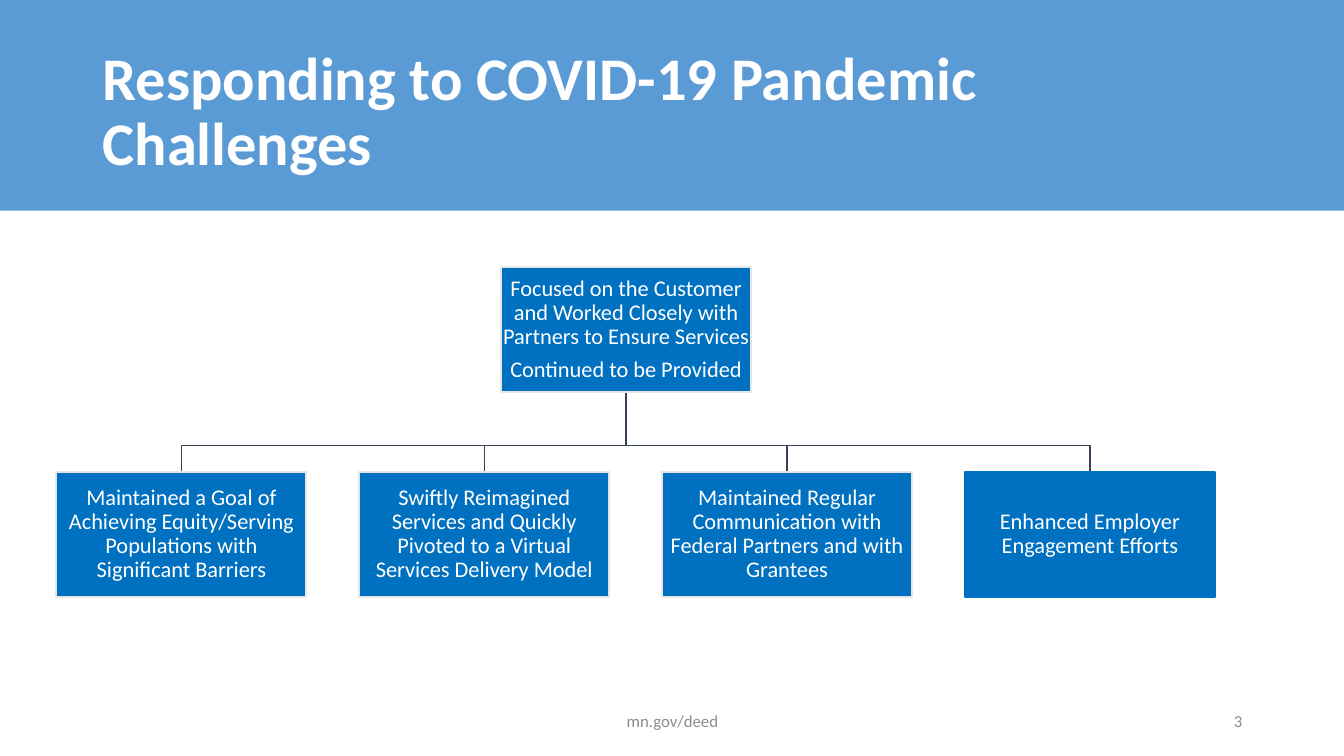
from dataclasses import dataclass

from lxml import etree
from pptx import Presentation
from pptx import util as u
from pptx.dml.color import RGBColor
from pptx.enum import shapes, text
from pptx.oxml.ns import qn


@dataclass(frozen=True)
class Theme:
    """Colours, font and type sizes of the slide."""
    band: str = "5B9BD5"
    box: str = "0070C0"
    border: str = "E7E6E6"
    branch: str = "364355"
    light: str = "FFFFFF"
    muted: str = "8C8C8C"
    font: str = "Calibri"
    title_size: float = 43.2
    box_size: float = 16
    footer_size: float = 12


class ChartPage:
    """Draws the elements of an organisation chart on one slide."""

    def __init__(self, page, theme):
        """Keep the slide and its style."""
        self.page = page
        self.theme = theme

    def rectangle(self, left, top, width, height, fill, border=None):
        """Add a filled rectangle with an optional border."""
        shape = self.page.shapes.add_shape(
            shapes.MSO_SHAPE.RECTANGLE,
            *map(u.Inches, (left, top, width, height)))
        shape.shadow.inherit = False
        shape.fill.solid()
        shape.fill.fore_color.rgb = RGBColor.from_string(fill)
        if border:
            shape.line.color.rgb = RGBColor.from_string(border)
            shape.line.width = u.Pt(1.5)
        else:
            shape.line.fill.background()
        return shape

    def fill_text(self, shape, paragraphs, size, color, align, bold=False,
                  spacing=1.0, after=0):
        """Fill a shape with vertically centred paragraphs."""
        frame = shape.text_frame
        frame.word_wrap = True
        frame.vertical_anchor = text.MSO_ANCHOR.MIDDLE
        for index, wording in enumerate(paragraphs):
            para = frame.add_paragraph() if index else frame.paragraphs[0]
            para.alignment = align
            para.line_spacing = spacing
            para.space_after = u.Pt(after)
            span = para.add_run()
            span.text = wording
            span.font.name = self.theme.font
            span.font.size = u.Pt(size)
            span.font.bold = bold
            span.font.color.rgb = RGBColor.from_string(color)

    def label(self, left, top, width, height, wording, size, color, align,
              **style):
        """Add a single-paragraph text box."""
        box = self.page.shapes.add_textbox(
            *map(u.Inches, (left, top, width, height)))
        self.fill_text(box, [wording], size, color, align, **style)

    def node(self, left, top, width, height, paragraphs, border):
        """Add a chart box with centred text."""
        box = self.rectangle(left, top, width, height, self.theme.box, border)
        frame = box.text_frame
        frame.margin_left = frame.margin_right = u.Inches(0.01)
        frame.margin_top = frame.margin_bottom = u.Inches(0.01)
        self.fill_text(box, paragraphs, self.theme.box_size, self.theme.light,
                       text.PP_ALIGN.CENTER, spacing=0.9, after=5.6)

    def branch(self, points):
        """Add an open line through the given points."""
        start, *others = [tuple(map(u.Inches, point)) for point in points]
        builder = self.page.shapes.build_freeform(*start)
        builder.add_line_segments(others, close=False)
        line = builder.convert_to_shape()
        line.fill.background()
        line.line.color.rgb = RGBColor.from_string(self.theme.branch)
        line.line.width = u.Pt(1)
        etree.SubElement(line.element.spPr, qn("a:effectLst"))


NODE_WIDTH, NODE_HEIGHT = 2.48, 1.24
ROOT_LEFT, ROOT_TOP = 4.97, 2.65
CHILD_LEFT, CHILD_RIGHT, CHILD_TOP = 0.56, 9.57, 4.68
BRANCH_TOP, BRANCH_TURN = ROOT_TOP + NODE_HEIGHT, 4.42

ROOT = [
    "Focused on the Customer and Worked Closely with Partners to Ensure Services",
    "Continued to be Provided",
]
CHILDREN = [
    "Maintained a Goal of Achieving Equity/Serving Populations with Significant Barriers",
    "Swiftly Reimagined Services and Quickly Pivoted to a Virtual Services Delivery Model",
    "Maintained Regular Communication with Federal Partners and with Grantees",
    "Enhanced Employer Engagement Efforts",
]


def main():
    """Build the slide and save it."""
    deck = Presentation()
    deck.slide_width, deck.slide_height = u.Inches(13.33), u.Inches(7.5)
    theme = Theme()
    chart = ChartPage(deck.slides.add_slide(deck.slide_layouts[6]), theme)

    chart.rectangle(0, 0, 13.33, 2.09, theme.band)
    chart.label(0.92, 0.4, 11.5, 1.45,
                "Responding to COVID-19 Pandemic Challenges", theme.title_size,
                theme.light, text.PP_ALIGN.LEFT, bold=True, spacing=0.9)

    root_center = ROOT_LEFT + NODE_WIDTH / 2
    step = (CHILD_RIGHT - CHILD_LEFT) / (len(CHILDREN) - 1)
    lefts = [CHILD_LEFT + index * step for index in range(len(CHILDREN))]
    for left in lefts:
        center = left + NODE_WIDTH / 2
        chart.branch([(root_center, BRANCH_TOP), (root_center, BRANCH_TURN),
                      (center, BRANCH_TURN), (center, CHILD_TOP)])

    chart.node(ROOT_LEFT, ROOT_TOP, NODE_WIDTH, NODE_HEIGHT, ROOT, theme.border)
    for left, wording in zip(lefts, CHILDREN):
        border = theme.box if wording == CHILDREN[-1] else theme.border
        chart.node(left, CHILD_TOP, NODE_WIDTH, NODE_HEIGHT, [wording], border)

    chart.label(4.42, 6.95, 4.5, 0.4, "mn.gov/deed", theme.footer_size,
                theme.muted, text.PP_ALIGN.CENTER)
    chart.label(9.42, 6.95, 3, 0.4, "3", theme.footer_size, theme.muted,
                text.PP_ALIGN.RIGHT, after=6)
    deck.save("out.pptx")


if __name__ == "__main__":
    main()
